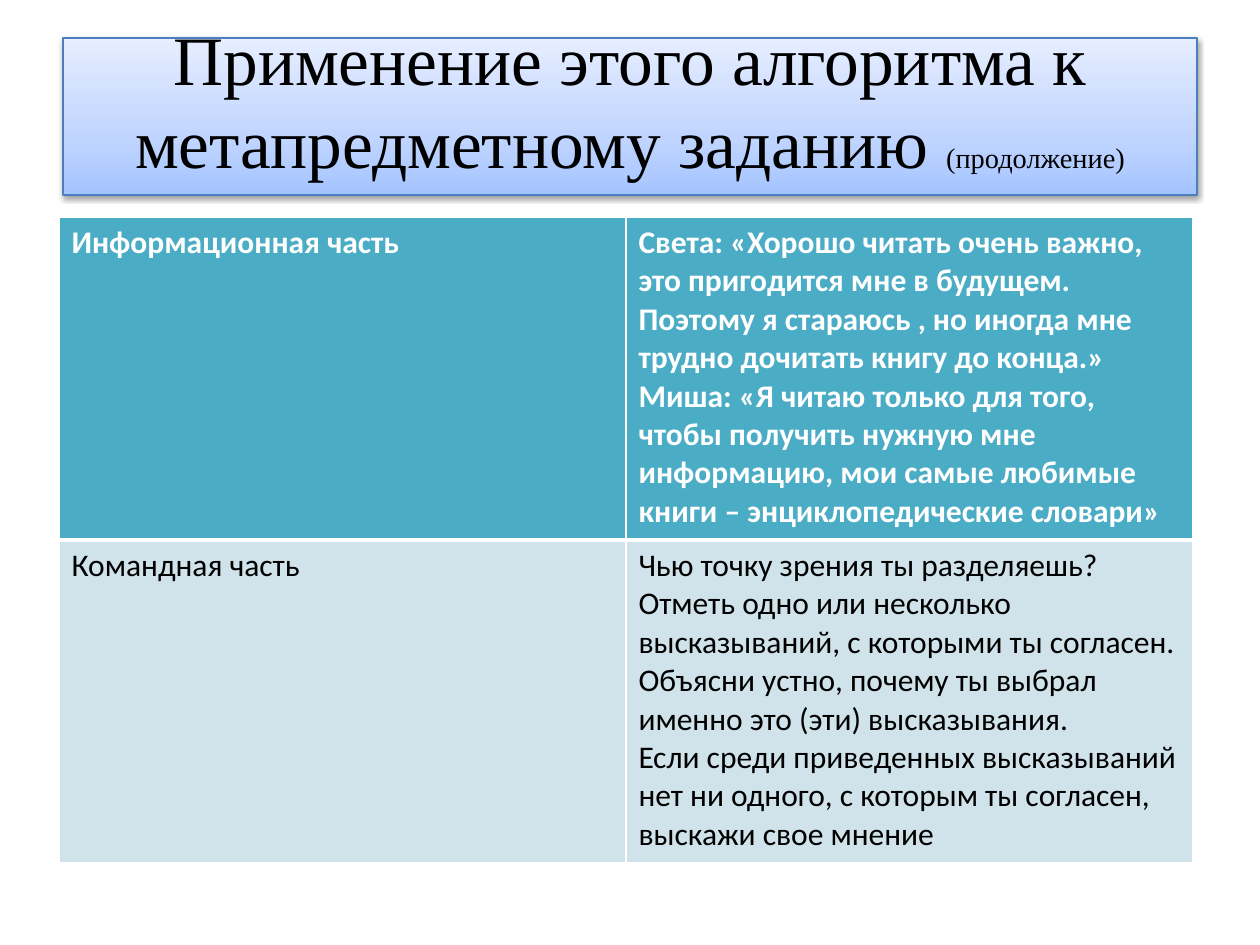
from lxml import etree
from pptx import Presentation
from pptx.dml.color import RGBColor
from pptx.enum.text import MSO_ANCHOR, MSO_AUTO_SIZE, PP_ALIGN
from pptx.oxml import parse_xml
from pptx.oxml.ns import nsdecls, qn
from pptx.util import Emu, Pt

PX = 914400 // 126
MIDDLE = MSO_ANCHOR.MIDDLE
CENTER = PP_ALIGN.CENTER
NO_AUTOFIT = MSO_AUTO_SIZE.NONE
THEME = {
    "title_font": "Times New Roman", "title_size": 39.6, "note_size": 16.2,
    "table_font": "Calibri", "table_size": 18,
    "black": "000000", "white": "FFFFFF", "title_line": "4B7EBC",
    "title_gradient": [(0, "A4C4FF"), (35, "BFD4FF"), (100, "E6EEFF")],
    "row_fills": ["4BACC6", "D0E3EA"],
}
ROWS = [
    (["Информационная часть"],
     ["Света: «Хорошо читать очень важно, это пригодится мне в будущем. "
      "Поэтому я стараюсь , но иногда мне трудно дочитать книгу до конца.»",
      "Миша: «Я читаю только для того, чтобы получить нужную мне информацию, "
      "мои самые любимые книги – энциклопедические словари»"]),
    (["Командная часть"],
     ["Чью точку зрения ты разделяешь?",
      "Отметь одно или несколько высказываний, с которыми ты согласен.",
      "Объясни устно, почему ты выбрал именно это (эти) высказывания.",
      "Если среди приведенных высказываний нет ни одного, с которым ты "
      "согласен, выскажи свое мнение"]),
]


def px(*lengths):
    return [Emu(length * PX) for length in lengths]


def add_border(cell, side, points):
    properties = cell._tc.get_or_add_tcPr()
    line = etree.SubElement(properties, qn(f"a:ln{side}"), w=str(Pt(points)))
    fill = etree.SubElement(line, qn("a:solidFill"))
    etree.SubElement(fill, qn("a:srgbClr"), val=THEME["white"])


presentation = Presentation()
presentation.slide_width, presentation.slide_height = px(1260, 945)
slide = presentation.slides.add_slide(presentation.slide_layouts[5])

# Title with a gradient and a soft shadow
title = slide.shapes.title
title.left, title.top, title.width, title.height = px(63, 38, 1134, 157)
stops = "".join(
    f'<a:gs pos="{position * 1000}"><a:srgbClr val="{color}"/></a:gs>'
    for position, color in THEME["title_gradient"])
title_properties = title._element.spPr
title_properties.append(parse_xml(
    f'<a:gradFill {nsdecls("a")} rotWithShape="1"><a:gsLst>{stops}</a:gsLst>'
    '<a:lin ang="16200000" scaled="0"/></a:gradFill>'))
title.line.color.rgb = RGBColor.from_string(THEME["title_line"])
title.line.width = Pt(0.75)
title_properties.append(parse_xml(
    f'<a:effectLst {nsdecls("a")}><a:outerShdw blurRad="{Pt(3.1)}" '
    f'dist="{Pt(1.6)}" dir="5400000" rotWithShape="0">'
    f'<a:srgbClr val="{THEME["black"]}"><a:alpha val="38000"/></a:srgbClr>'
    '</a:outerShdw></a:effectLst>'))

frame = title.text_frame
frame.word_wrap = True
frame.auto_size = NO_AUTOFIT
frame.vertical_anchor = MIDDLE
paragraph = frame.paragraphs[0]
paragraph.alignment = CENTER
paragraph.font.name = THEME["title_font"]
paragraph.font.color.rgb = RGBColor.from_string(THEME["black"])
for text, size in [
        ("Применение этого алгоритма к метапредметному заданию ", THEME["title_size"]),
        ("(продолжение)", THEME["note_size"])]:
    run = paragraph.add_run()
    run.text = text
    run.font.size = Pt(size)
paragraph.add_line_break()
paragraph._p.get_or_add_endParaRPr().set("sz", str(round(THEME["note_size"] * 100)))

# Table of the parts of the task
table = slide.shapes.add_table(len(ROWS), 2, *px(59, 217, 1134, 646)).table
for row_index, row in enumerate(ROWS):
    is_header = row_index == 0
    text_color = THEME["white"] if is_header else THEME["black"]
    for column_index, lines in enumerate(row):
        cell = table.cell(row_index, column_index)
        for side in "LRTB":
            below_header = (side == "B") if is_header else (side == "T")
            add_border(cell, side, 3 if below_header else 1)
        cell.fill.solid()
        cell.fill.fore_color.rgb = RGBColor.from_string(THEME["row_fills"][row_index])
        cell.text = "\n".join(lines)
        for paragraph in cell.text_frame.paragraphs:
            paragraph.font.name = THEME["table_font"]
            paragraph.font.size = Pt(THEME["table_size"])
            paragraph.font.bold = is_header
            paragraph.font.color.rgb = RGBColor.from_string(text_color)

presentation.save("out.pptx")
